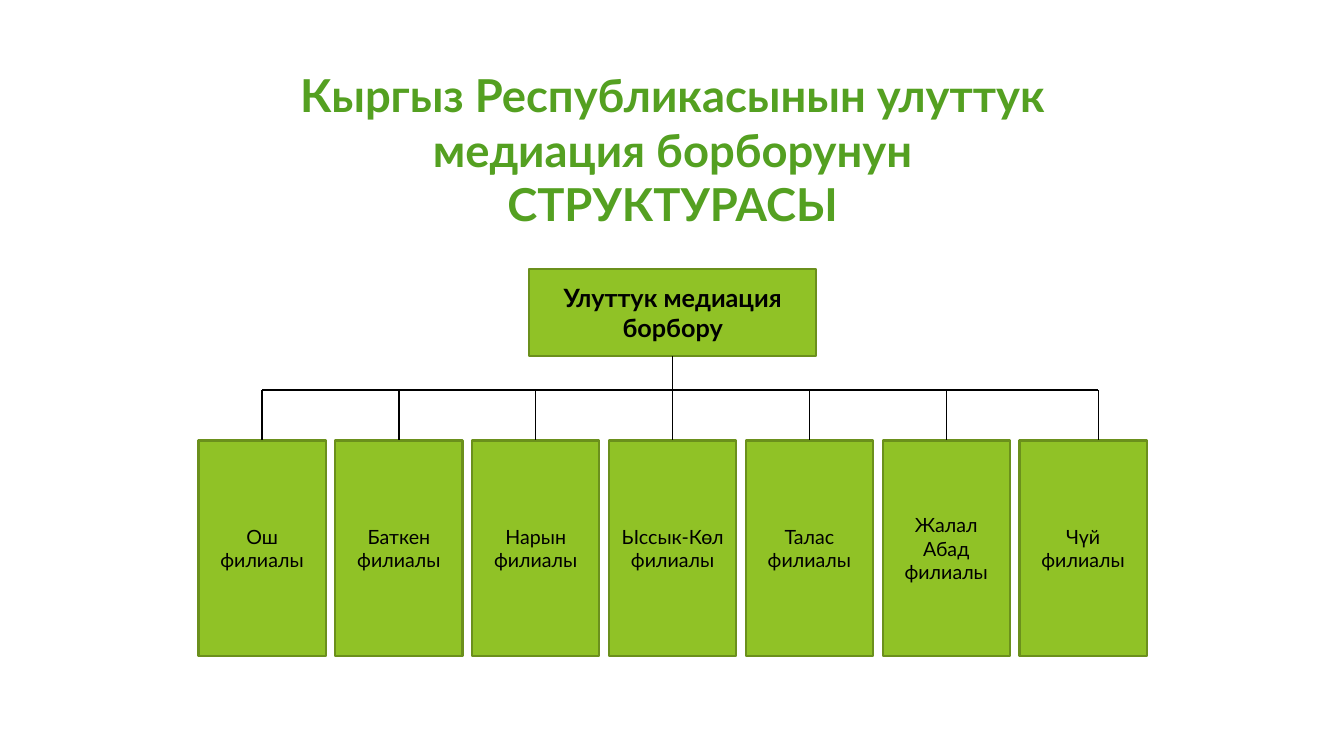
from pptx import Presentation
from pptx.dml.color import RGBColor
from pptx.enum.shapes import MSO_CONNECTOR, MSO_SHAPE
from pptx.enum.text import MSO_ANCHOR, MSO_AUTO_SIZE, PP_ALIGN
from pptx.oxml.ns import qn
from pptx.util import Inches, Pt

BRANCHES = ["Ош", "Баткен", "Нарын", "Ыссык-Көл", "Талас", "Жалал Абад", "Чүй"]
GREEN, DARK_GREEN, TITLE_GREEN, BLACK = "90C226", "6B901C", "54A021", "000000"
MIDDLE = (len(BRANCHES) - 1) / 2
BUS_ROW, BRANCH_ROW = 30.96, 34.96
LAST_DROP = 6.11  # the last drop stands a little right of its box's centre


def color(value):
    return RGBColor.from_string(value)


class ChartPage:
    """Slide with a grid: column numbers mark box centres, row numbers mark tops."""

    first_center, column, row = Inches(2.6), Inches(9.5 / 7), Inches(7.5 / 60)
    font_name = "Lato"

    def __init__(self, deck):
        self.page = deck.slides.add_slide(deck.slide_layouts[5])

    def x(self, center):
        return round(self.first_center + center * self.column)

    def y(self, row):
        return round(row * self.row)

    def area(self, center, top, columns, rows):
        width = round(columns * self.column)
        return self.x(center) - width // 2, self.y(top), width, self.y(rows)

    def set_text(self, shape, text, size, ink, bold, anchor):
        frame = shape.text_frame
        frame.text = text
        settings = {"word_wrap": True, "auto_size": MSO_AUTO_SIZE.NONE,
                    "vertical_anchor": anchor}
        for name, value in settings.items():
            setattr(frame, name, value)
        font_format = {"name": self.font_name, "size": Pt(size), "bold": bold}
        for para in frame.paragraphs:
            para.alignment = PP_ALIGN.CENTER
            for span in para.runs:
                for name, value in font_format.items():
                    setattr(span.font, name, value)
                span.font.color.rgb = color(ink)

    def title(self, text, *place):
        box = self.page.shapes.title
        for name, value in zip(("left", "top", "width", "height"), self.area(*place)):
            setattr(box, name, value)
        self.set_text(box, text, 32.4, TITLE_GREEN, True, MSO_ANCHOR.TOP)

    def box(self, text, *place, size=14, bold=False):
        box = self.page.shapes.add_shape(MSO_SHAPE.RECTANGLE, *self.area(*place))
        box.shadow.inherit = False
        box.fill.solid()
        box.fill.fore_color.rgb = color(GREEN)
        box.line.color.rgb = color(DARK_GREEN)
        box.line.width = Pt(1.5)
        self.set_text(box, text, size, BLACK, bold, MSO_ANCHOR.MIDDLE)
        return box

    def line(self, start, end):
        """Draw a line between two (column, row) points."""
        (left, top), (right, bottom) = start, end
        line = self.page.shapes.add_connector(
            MSO_CONNECTOR.STRAIGHT,
            self.x(left), self.y(top), self.x(right), self.y(bottom))
        line.line.color.rgb = color(BLACK)
        line.line.width = Pt(1)
        properties = line._element.spPr
        properties.append(properties.makeelement(qn("a:effectLst"), {}))
        return line


def main():
    deck = Presentation()
    deck.slide_width, deck.slide_height = Inches(13.33), Inches(7.5)
    chart = ChartPage(deck)

    chart.title("Кыргыз Республикасынын улуттук медиация борборунун\vСТРУКТУРАСЫ",
                MIDDLE, 4.96, 6.93, 11.52)
    center = chart.box("Улуттук медиация борбору", MIDDLE, 21.36, 2.1, 6.88,
                       size=18, bold=True)
    branches = [chart.box(f"{name} филиалы", index, BRANCH_ROW, 0.93, 17.12)
                for index, name in enumerate(BRANCHES)]

    chart.line((0, BUS_ROW), (LAST_DROP, BUS_ROW))
    stem = chart.line((MIDDLE, 28.24), (MIDDLE, BUS_ROW))
    stem.begin_connect(center, 2)
    for index, branch in enumerate(branches[:-1]):
        drop = chart.line((index, BUS_ROW), (index, BRANCH_ROW))
        drop.end_connect(branch, 0)
    chart.line((LAST_DROP, BUS_ROW), (LAST_DROP, BRANCH_ROW))

    deck.save("out.pptx")


if __name__ == "__main__":
    main()
